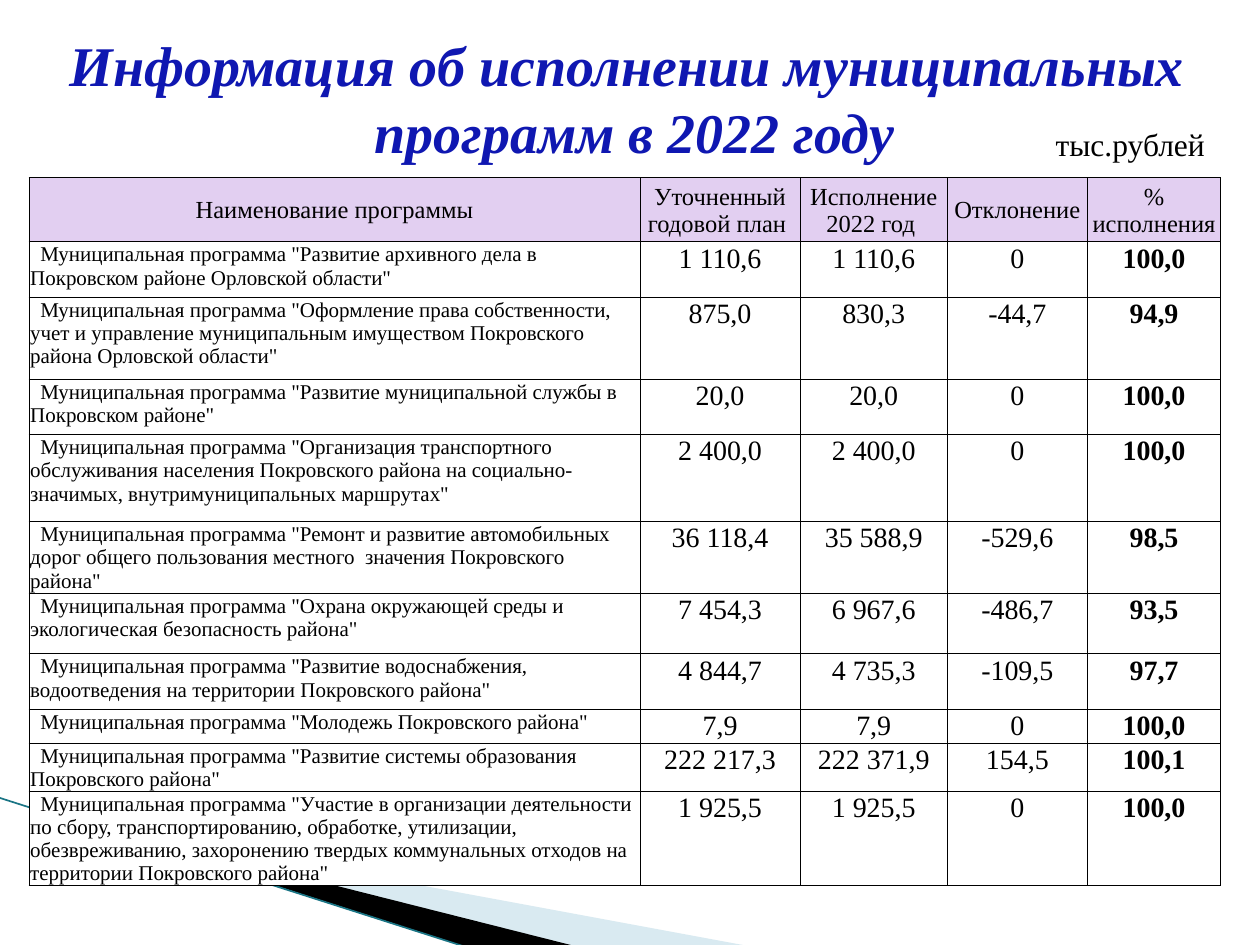
"""Build the slide on the execution of municipal programmes in 2022."""
from dataclasses import dataclass
from typing import NamedTuple

from lxml.etree import SubElement
from pptx import Presentation
from pptx.dml.color import RGBColor
from pptx.enum.shapes import MSO_CONNECTOR
from pptx.enum.text import MSO_ANCHOR, MSO_AUTO_SIZE, PP_ALIGN
from pptx.oxml.ns import qn
from pptx.util import Inches, Pt


@dataclass(frozen=True)
class Theme:
    """Colours, font and type sizes of the slide."""
    font: str = "Times New Roman"
    ink: str = "000000"
    heading: str = "0F17B1"
    header_fill: str = "E2CFF1"
    paper: str = "FFFFFF"
    pale_wedge: str = "A0CBDC"
    edge: str = "1A7585"
    title_size: int = 32
    unit_size: int = 18
    value_size: int = 16
    header_size: int = 14
    name_size: int = 12
    border: float = 0.5


class Programme(NamedTuple):
    """One programme with its figures and row height."""
    name: str
    plan: str
    actual: str
    deviation: str
    percent: str
    height: float


class Wedge(NamedTuple):
    """One decorative wedge: its outline, frame, colour and opacity."""
    points: list
    frame: tuple
    colour: str
    opacity: int


THEME = Theme()
HEADERS = ("Наименование программы", "Уточненный годовой план ", "Исполнение 2022 год ",
           "Отклонение", "% исполнения")
COLUMN_WIDTHS = (4.85, 1.27, 1.17, 1.11, 1.06)
HEADER_HEIGHT = 0.51
PROGRAMMES = [
    Programme("Развитие архивного дела в Покровском районе Орловской области",
              "1 110,6", "1 110,6", "0", "100,0", 0.44),
    Programme("Оформление права собственности, учет и управление муниципальным имуществом "
              "Покровского района Орловской области",
              "875,0", "830,3", "-44,7", "94,9", 0.65),
    Programme("Развитие муниципальной службы в Покровском районе",
              "20,0", "20,0", "0", "100,0", 0.44),
    Programme("Организация транспортного обслуживания населения Покровского района на "
              "социально-значимых, внутримуниципальных маршрутах",
              "2 400,0", "2 400,0", "0", "100,0", 0.69),
    Programme("Ремонт и развитие автомобильных дорог общего пользования местного  "
              "значения Покровского района",
              "36 118,4", "35 588,9", "-529,6", "98,5", 0.57),
    Programme("Охрана окружающей среды и экологическая безопасность района",
              "7 454,3", "6 967,6", "-486,7", "93,5", 0.48),
    Programme("Развитие водоснабжения, водоотведения на территории Покровского района",
              "4 844,7", "4 735,3", "-109,5", "97,7", 0.44),
    Programme("Молодежь Покровского района", "7,9", "7,9", "0", "100,0", 0.27),
    Programme("Развитие системы образования Покровского района",
              "222 217,3", "222 371,9", "154,5", "100,1", 0.38),
    Programme("Участие в организации деятельности по сбору, транспортированию, обработке, "
              "утилизации, обезвреживанию, захоронению твердых коммунальных отходов на "
              "территории Покровского района",
              "1 925,5", "1 925,5", "0", "100,0", 0.74),
]
WEDGES = [
    Wedge([(0.55, 6.51), (5.95, 7.51), (4.56, 7.51), (0.55, 6.5)],
          (0.78, 5.47, 4.16, 1.58), THEME.pale_wedge, 40),
    Wedge([(0.53, 6.49), (4.57, 7.51), (3.72, 7.52), (0.54, 6.5)],
          (-0.06, 6.33, 4.16, 0.92), THEME.ink, 100),
]


def style_text(frame, size: int, colour: str = THEME.ink, bold: bool = False,
               italic: bool = False, align=PP_ALIGN.LEFT) -> None:
    """Format every run of a text frame."""
    for paragraph in frame.paragraphs:
        paragraph.alignment = align
        for run in paragraph.runs:
            run.font.name = THEME.font
            run.font.size = Pt(size)
            run.font.bold = bold
            run.font.italic = italic
            run.font.color.rgb = RGBColor.from_string(colour)


def set_frame(outline, frame: tuple) -> None:
    """Give a freeform another frame while its points stay in place."""
    left, top, width, height = (Inches(length) for length in frame)
    shift_x, shift_y = outline.left - left, outline.top - top
    outline.left, outline.top, outline.width, outline.height = left, top, width, height
    for contour in outline._element.iter(qn("a:path")):
        contour.set("w", str(width))
        contour.set("h", str(height))
        for point in contour.iter(qn("a:pt")):
            point.set("x", str(int(point.get("x")) + shift_x))
            point.set("y", str(int(point.get("y")) + shift_y))


def draw_wedge(slide, wedge: Wedge) -> None:
    """Draw a filled wedge without an outline."""
    start, *rest = [(Inches(x), Inches(y)) for x, y in wedge.points]
    builder = slide.shapes.build_freeform(*start)
    builder.add_line_segments(rest, close=True)
    outline = builder.convert_to_shape()
    set_frame(outline, wedge.frame)
    outline.shadow.inherit = False
    outline.line.fill.background()
    outline.fill.solid()
    outline.fill.fore_color.rgb = RGBColor.from_string(wedge.colour)
    if wedge.opacity < 100:
        colour = outline.fill._xPr.find(qn("a:solidFill"))[0]
        SubElement(colour, qn("a:alpha"), val=str(wedge.opacity * 1000))


def draw_edge(slide) -> None:
    """Draw the thin line along the wedges."""
    edge = slide.shapes.add_connector(MSO_CONNECTOR.STRAIGHT, Inches(-0.01), Inches(6.33),
                                      Inches(3.71), Inches(7.52))
    edge.line.color.rgb = RGBColor.from_string(THEME.edge)
    edge.line.width = Pt(0.95)
    SubElement(edge._element.spPr, qn("a:effectLst"))


def fill_cell(cell, text: str, size: int, fill: str = "", bold: bool = False,
              align=PP_ALIGN.CENTER, anchor=MSO_ANCHOR.TOP) -> None:
    """Write one table cell with its borders and fill."""
    cell.text_frame.text = text
    style_text(cell.text_frame, size, bold=bold, align=align)
    cell.vertical_anchor = anchor
    cell.margin_left = cell.margin_right = cell.margin_top = Inches(0.01)
    cell.margin_bottom = 0
    properties = cell._tc.get_or_add_tcPr()
    for side in ("lnL", "lnR", "lnT", "lnB"):
        border = SubElement(properties, qn(f"a:{side}"), w=str(Pt(THEME.border)))
        SubElement(SubElement(border, qn("a:solidFill")), qn("a:srgbClr"), val=THEME.ink)
    if fill:
        cell.fill.solid()
        cell.fill.fore_color.rgb = RGBColor.from_string(fill)
    else:
        cell.fill.background()


def draw_table(slide) -> None:
    """Draw the table of programmes."""
    heights = [HEADER_HEIGHT] + [programme.height for programme in PROGRAMMES]
    table = slide.shapes.add_table(len(heights), len(HEADERS), Inches(0.23), Inches(1.41),
                                   Inches(sum(COLUMN_WIDTHS)), Inches(sum(heights))).table
    table.first_row = table.horz_banding = False
    for column, width in zip(table.columns, COLUMN_WIDTHS):
        column.width = Inches(width)
    for row, height in zip(table.rows, heights):
        row.height = Inches(height)
    for column, header in enumerate(HEADERS):
        fill_cell(table.cell(0, column), header, THEME.header_size, THEME.header_fill,
                  anchor=MSO_ANCHOR.MIDDLE)
    for row, programme in enumerate(PROGRAMMES, 1):
        name_cell = table.cell(row, 0)
        fill_cell(name_cell, f'Муниципальная программа "{programme.name}"', THEME.name_size,
                  THEME.paper if row == len(PROGRAMMES) else "", align=PP_ALIGN.LEFT)
        name_cell.text_frame.paragraphs[0]._p.get_or_add_pPr().set("indent", str(Inches(0.08)))
        for column, value in enumerate(programme[1:5], 1):
            fill_cell(table.cell(row, column), value, THEME.value_size,
                      bold=column == len(HEADERS) - 1)


def draw_title(slide) -> None:
    """Place the slide title."""
    title = slide.shapes.title
    title.left, title.top = Inches(0.31), Inches(0.3)
    title.width, title.height = Inches(9.45), Inches(0.95)
    title.text_frame.text = "Информация об исполнении муниципальных \vпрограмм в 2022 году"
    title.text_frame.vertical_anchor = MSO_ANCHOR.MIDDLE
    title.text_frame.auto_size = MSO_AUTO_SIZE.NONE
    style_text(title.text_frame, THEME.title_size, THEME.heading, True, True, PP_ALIGN.CENTER)


def draw_unit(slide) -> None:
    """Place the unit of measure above the table."""
    unit = slide.shapes.add_textbox(Inches(8.28), Inches(0.94), Inches(1.4), Inches(0.4))
    unit.text_frame.text = "тыс.рублей"
    unit.text_frame.word_wrap = False
    unit.text_frame.auto_size = MSO_AUTO_SIZE.SHAPE_TO_FIT_TEXT
    style_text(unit.text_frame, THEME.unit_size)


def main() -> None:
    """Build and save the presentation."""
    presentation = Presentation()
    presentation.slide_width, presentation.slide_height = Inches(10), Inches(7.5)
    slide = presentation.slides.add_slide(presentation.slide_layouts[5])
    for wedge in WEDGES:
        draw_wedge(slide, wedge)
    draw_edge(slide)
    draw_title(slide)
    draw_table(slide)
    draw_unit(slide)
    presentation.save("out.pptx")


if __name__ == "__main__":
    main()
